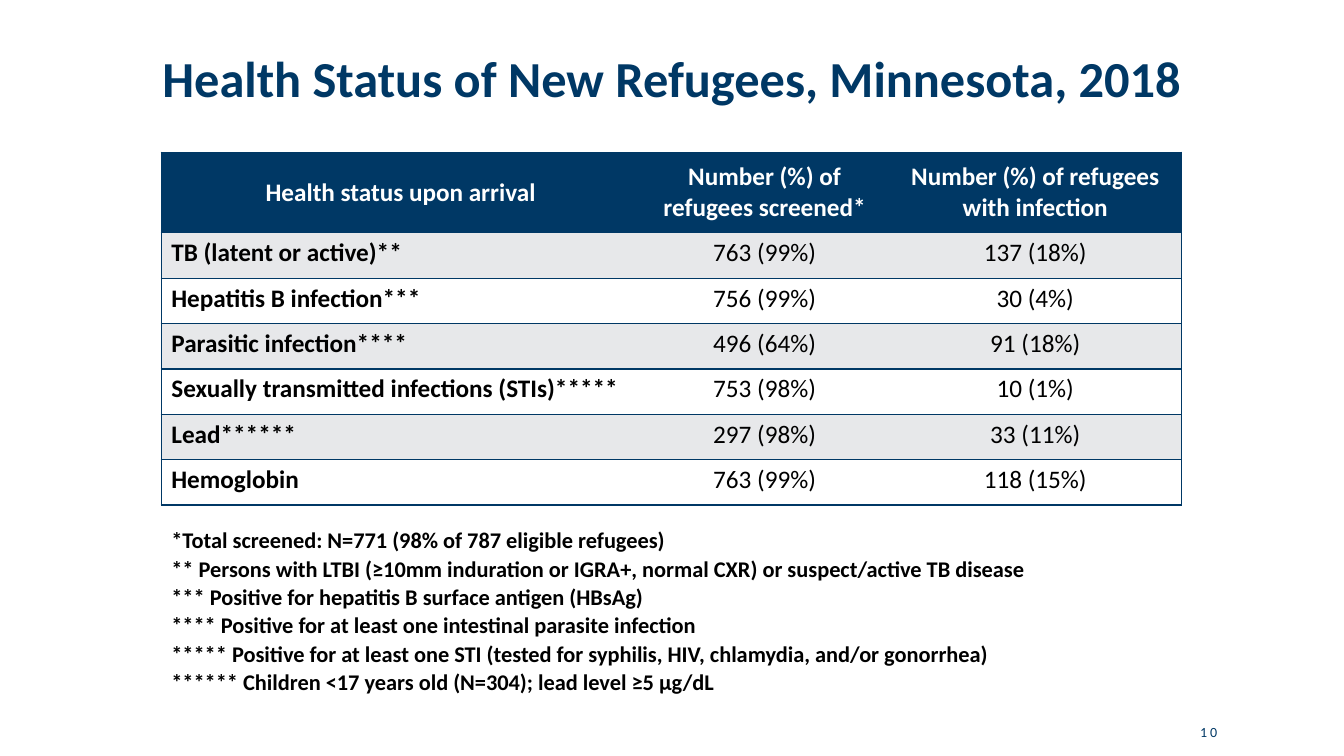
"""Build the refugee health status slide with its table and footnotes."""
from lxml.etree import SubElement
from pptx import Presentation
from pptx.dml.color import RGBColor
from pptx.enum.text import MSO_ANCHOR, MSO_AUTO_SIZE, PP_ALIGN
from pptx.oxml import parse_xml
from pptx.oxml.ns import nsdecls, qn
from pptx.util import Inches, Pt

COLORS = {"navy": "003865", "gray": "E7E8EA", "white": "FFFFFF", "black": "000000"}
FONT = "Calibri"
HEADERS = ["Health status upon arrival", "Number (%) of refugees screened*",
           "Number (%) of refugees with infection"]
ROWS = [
    ["TB (latent or active)**", "763 (99%)", "137 (18%)"],
    ["Hepatitis B infection***", "756 (99%)", "30 (4%)"],
    ["Parasitic infection****", "496 (64%)", "91 (18%)"],
    ["Sexually transmitted infections (STIs)*****", "753 (98%)", "10 (1%)"],
    ["Lead******", "297 (98%)", "33 (11%)"],
    ["Hemoglobin", "763 (99%)", "118 (15%)"],
]
NOTES = [
    "*Total screened: N=771 (98% of 787 eligible refugees)",
    "** Persons with LTBI (≥10mm induration or IGRA+, normal CXR) or suspect/active TB disease",
    "*** Positive for hepatitis B surface antigen (HBsAg)",
    "**** Positive for at least one intestinal parasite infection",
    "***** Positive for at least one STI (tested for syphilis, HIV, chlamydia, and/or gonorrhea)",
    "****** Children <17 years old (N=304); lead level ≥5 µg/dL",
]


def rgb(name):
    return RGBColor.from_string(COLORS[name])


def put(p, text, size=18, bold=False, color="black", align=PP_ALIGN.LEFT,
        line=None, before=None, tracking=None):
    r = p.add_run()
    r.text = text
    r.font.name, r.font.size, r.font.bold = FONT, Pt(size), bold
    r.font.color.rgb = rgb(color)
    p.alignment = align
    if line:
        p.line_spacing = line
    if before is not None:
        p.space_before = Pt(before)
    if tracking:
        r.font._element.set("spc", str(tracking * 100))


class Deck:
    def __init__(self):
        self.prs = Presentation()
        self.prs.slide_width, self.prs.slide_height = Inches(13.33), Inches(7.5)
        self.s = self.prs.slides.add_slide(self.prs.slide_layouts[1])

    def x(self, cols):
        return int(self.prs.slide_width * cols / 100)

    def y(self, rows):
        return int(self.prs.slide_height * rows / 100)

    def box(self, left, top, width, height):
        return self.x(left), self.y(top), self.x(width), self.y(height)

    def frame(self, sp, box):
        sp.left, sp.top, sp.width, sp.height = self.box(*box)
        tf = sp.text_frame
        tf.word_wrap, tf.auto_size = True, MSO_AUTO_SIZE.NONE
        tf.vertical_anchor = MSO_ANCHOR.MIDDLE
        return tf

    def title(self, text, box):
        tf = self.frame(self.s.shapes.title, box)
        put(tf.paragraphs[0], text, size=36, bold=True, color="navy",
            align=PP_ALIGN.CENTER, line=0.9)

    def notes(self, lines, box):
        tf = self.frame(self.s.placeholders[1], box)
        for i, text in enumerate(lines):
            p = tf.add_paragraph() if i else tf.paragraphs[0]
            pPr = p._p.get_or_add_pPr()
            pPr.set("marL", str(Inches(0.5)))
            pPr.set("indent", str(Inches(-0.5)))
            SubElement(pPr, qn("a:buNone"))
            put(p, text, size=16, bold=True, line=0.9, before=3 if i else 0)

    def number(self, text, box):
        sp = self.s.shapes.add_textbox(*self.box(*box))
        put(self.frame(sp, box).paragraphs[0], text, size=10, color="navy",
            align=PP_ALIGN.RIGHT, tracking=2)

    def borders(self, cell, sides):
        tcPr = cell._tc.get_or_add_tcPr()
        for i, side in enumerate("LRTB"):
            fill = (f'<a:solidFill><a:srgbClr val="{COLORS["navy"]}"/></a:solidFill>'
                    if side in sides else "<a:noFill/>")
            tcPr.insert(i, parse_xml(f'<a:ln{side} {nsdecls("a")} w="{Pt(1)}">{fill}</a:ln{side}>'))

    def table(self, left, top, widths, heights, data):
        box = self.box(left, top, sum(widths), sum(heights))
        tbl = self.s.shapes.add_table(len(heights), len(widths), *box).table
        tbl.horz_banding = tbl.first_row = False
        for col, width in zip(tbl.columns, widths):
            col.width = self.x(width)
        for row, height in zip(tbl.rows, heights):
            row.height = self.y(height)
        for i, texts in enumerate(data):
            for j, text in enumerate(texts):
                cell, head = tbl.cell(i, j), i == 0
                cell.fill.solid()
                cell.fill.fore_color.rgb = rgb("navy" if head else "gray" if i % 2 else "white")
                cell.vertical_anchor = MSO_ANCHOR.MIDDLE if head else MSO_ANCHOR.TOP
                put(cell.text_frame.paragraphs[0], text, bold=head or j == 0,
                    color="white" if head else "black",
                    align=PP_ALIGN.CENTER if head or j else PP_ALIGN.LEFT)
                edge = "L" if j == 0 else "R" if j == len(texts) - 1 else ""
                self.borders(cell, "TB" + edge)


def main():
    deck = Deck()
    deck.title("Health Status of New Refugees, Minnesota, 2018", (5.93, 5.07, 88.15, 11.47))
    deck.table(12, 20.13, [35.63, 18.53, 21.75], [10.67] + [6] * len(ROWS), [HEADERS] + ROWS)
    deck.notes(NOTES, (12, 68.4, 75.91, 25.2))
    deck.number("10", (86.42, 93.6, 4.88, 6.4))
    deck.prs.save("out.pptx")


if __name__ == "__main__":
    main()
